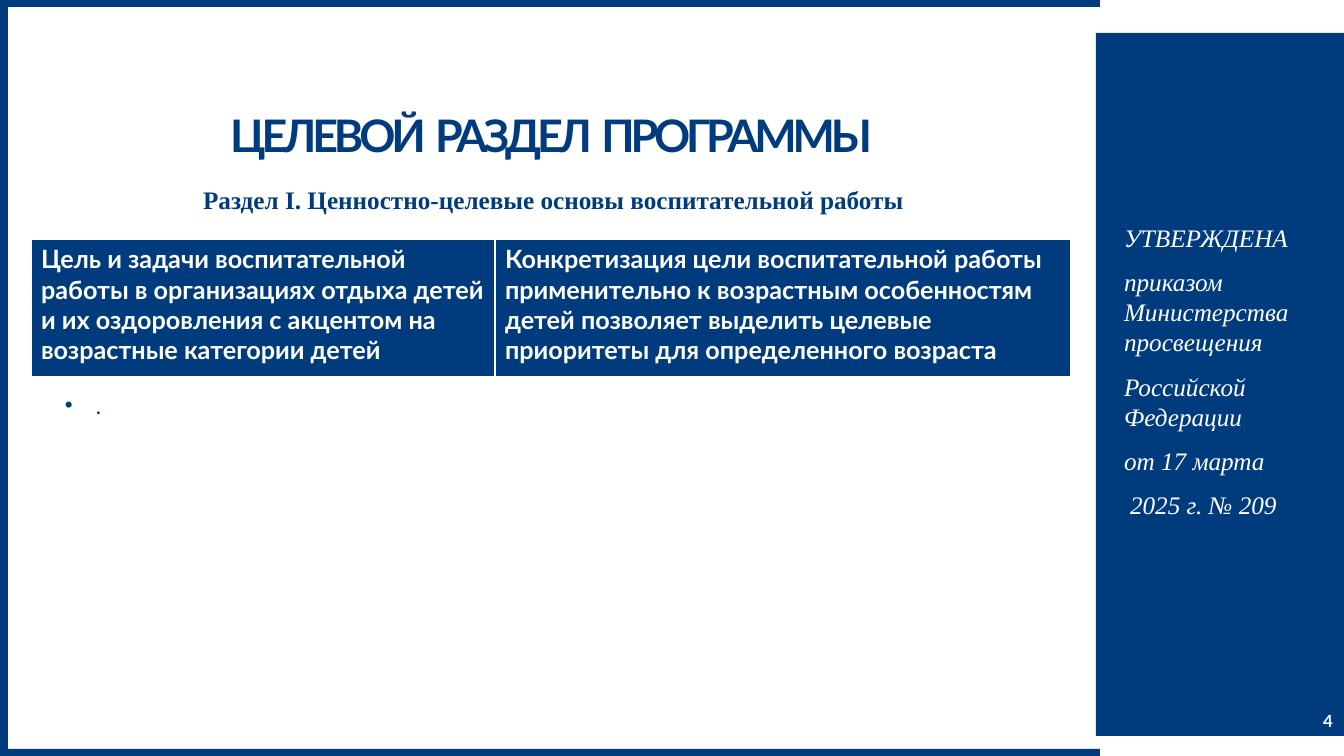
from dataclasses import dataclass

from lxml import etree
from pptx import Presentation
from pptx import util as u
from pptx.dml.color import RGBColor
from pptx.enum import shapes, text
from pptx.oxml import ns

EMU_PER_PX = 9071
COLORS = {"navy": "003C7D", "white": "FFFFFF"}
SANS, SERIF = "Lato", "Times New Roman"


@dataclass(frozen=True)
class Box:
    left: int
    top: int
    width: int
    height: int

    def emu(self) -> list[u.Emu]:
        return [px(v) for v in (self.left, self.top, self.width, self.height)]


@dataclass(frozen=True)
class Column:
    width: int
    wording: str


FRAME_BARS = [Box(0, 749, 1100, 7), Box(0, 0, 1100, 7), Box(0, 0, 8, 756)]
APPROVAL_PANEL = Box(1096, 33, 248, 703)
APPROVAL_LINES = [
    "УТВЕРЖДЕНА",
    "приказом Министерства просвещения",
    "Российской Федерации",
    "от 17 марта",
    "2025 г. № 209",
]
GOALS_COLUMNS = [
    Column(464, "Цель и задачи воспитательной работы в организациях отдыха детей "
                "и их оздоровления с акцентом на возрастные категории детей"),
    Column(576, "Конкретизация цели воспитательной работы применительно к возрастным "
                "особенностям детей позволяет выделить целевые приоритеты "
                "для определенного возраста"),
]
GOALS_TOP, GOALS_HEIGHT = 239, 139
BORDERS_PT = {"lnL": 1, "lnR": 1, "lnT": 1, "lnB": 3}


def px(value: int) -> u.Emu:
    return u.Emu(value * EMU_PER_PX)


def color(name: str) -> RGBColor:
    return RGBColor.from_string(COLORS[name])


def write(frame, lines: list[str], *, size: int, font: str = SANS, ink: str = "navy",
          bold: bool = False, italic: bool = False, align=text.PP_ALIGN.LEFT,
          anchor=None, insets: tuple[int, int, int, int] | None = None,
          line_spacing: float | None = None, gap: int = 0, tracking: int = 0,
          bullet: str = "", hanging: int = 0) -> None:
    frame.word_wrap = True
    if anchor is not None:
        frame.vertical_anchor = anchor
    if insets is not None:
        (frame.margin_left, frame.margin_top,
         frame.margin_right, frame.margin_bottom) = map(px, insets)
    for index, line in enumerate(lines):
        paragraph = frame.paragraphs[0] if index == 0 else frame.add_paragraph()
        paragraph.alignment = align
        if line_spacing:
            paragraph.line_spacing = line_spacing
        if gap and index:
            paragraph.space_before = u.Pt(gap)
        if bullet:
            properties = paragraph._p.get_or_add_pPr()
            properties.set("marL", str(px(hanging)))
            properties.set("indent", str(-px(hanging)))
            etree.SubElement(properties, ns.qn("a:buFont"), typeface="Arial")
            etree.SubElement(properties, ns.qn("a:buChar"), char=bullet)
        run = paragraph.add_run()
        run.text = line
        run.font.size = u.Pt(size)
        run.font.name = font
        run.font.bold = bold
        run.font.italic = italic
        run.font.color.rgb = color(ink)
        if tracking:
            run._r.get_or_add_rPr().set("spc", str(tracking * 100))


def add_block(slide, box: Box):
    block = slide.shapes.add_shape(shapes.MSO_SHAPE.RECTANGLE, *box.emu())
    block.shadow.inherit = False
    block.fill.solid()
    block.fill.fore_color.rgb = color("navy")
    block.line.fill.background()
    return block


def add_label(slide, box: Box, wording: str, **style) -> None:
    label = slide.shapes.add_textbox(*box.emu())
    write(label.text_frame, [wording], **style)


def add_borders(cell) -> None:
    properties = cell._tc.get_or_add_tcPr()
    for side, points in BORDERS_PT.items():
        edge = etree.SubElement(properties, ns.qn(f"a:{side}"), w=str(u.Pt(points)))
        fill = etree.SubElement(edge, ns.qn("a:solidFill"))
        etree.SubElement(fill, ns.qn("a:srgbClr"), val=COLORS["white"])


def add_goals(slide) -> None:
    box = Box(31, GOALS_TOP, sum(c.width for c in GOALS_COLUMNS), GOALS_HEIGHT)
    goals = slide.shapes.add_table(1, len(GOALS_COLUMNS), *box.emu()).table
    for index, column in enumerate(GOALS_COLUMNS):
        goals.columns[index].width = px(column.width)
        cell = goals.cell(0, index)
        add_borders(cell)
        cell.fill.solid()
        cell.fill.fore_color.rgb = color("navy")
        write(cell.text_frame, [column.wording], size=18, ink="white", bold=True)


def main() -> None:
    deck = Presentation()
    deck.slide_width, deck.slide_height = px(1344), px(756)
    slide = deck.slides.add_slide(deck.slide_layouts[6])
    center = text.PP_ALIGN.CENTER
    middle = text.MSO_ANCHOR.MIDDLE

    for bar in FRAME_BARS:
        add_block(slide, bar)
    add_label(slide, Box(31, 33, 1040, 206), "ЦЕЛЕВОЙ  РАЗДЕЛ  ПРОГРАММЫ",
              size=32, bold=True, align=center, anchor=text.MSO_ANCHOR.BOTTOM,
              insets=(0, 0, 0, 98), line_spacing=1.07, tracking=-3)
    approval = add_block(slide, APPROVAL_PANEL)
    write(approval.text_frame, APPROVAL_LINES, size=18, font=SERIF, ink="white",
          italic=True, anchor=middle, insets=(28, 0, 0, 27), gap=10)
    approval.text_frame.paragraphs[-1]._p.get_or_add_pPr().set("indent", str(px(6)))
    add_label(slide, Box(1313, 706, 30, 30), "4", size=12, ink="white", bold=True,
              align=center, anchor=middle, insets=(0, 0, 0, 0))
    add_label(slide, Box(55, 387, 953, 37), ".", size=16, bullet="•", hanging=31)
    add_label(slide, Box(99, 177, 909, 41),
              "Раздел I. Ценностно-целевые основы воспитательной работы",
              size=18, font=SERIF, bold=True, align=center, line_spacing=1.07)
    add_goals(slide)
    deck.save("out.pptx")


if __name__ == "__main__":
    main()
